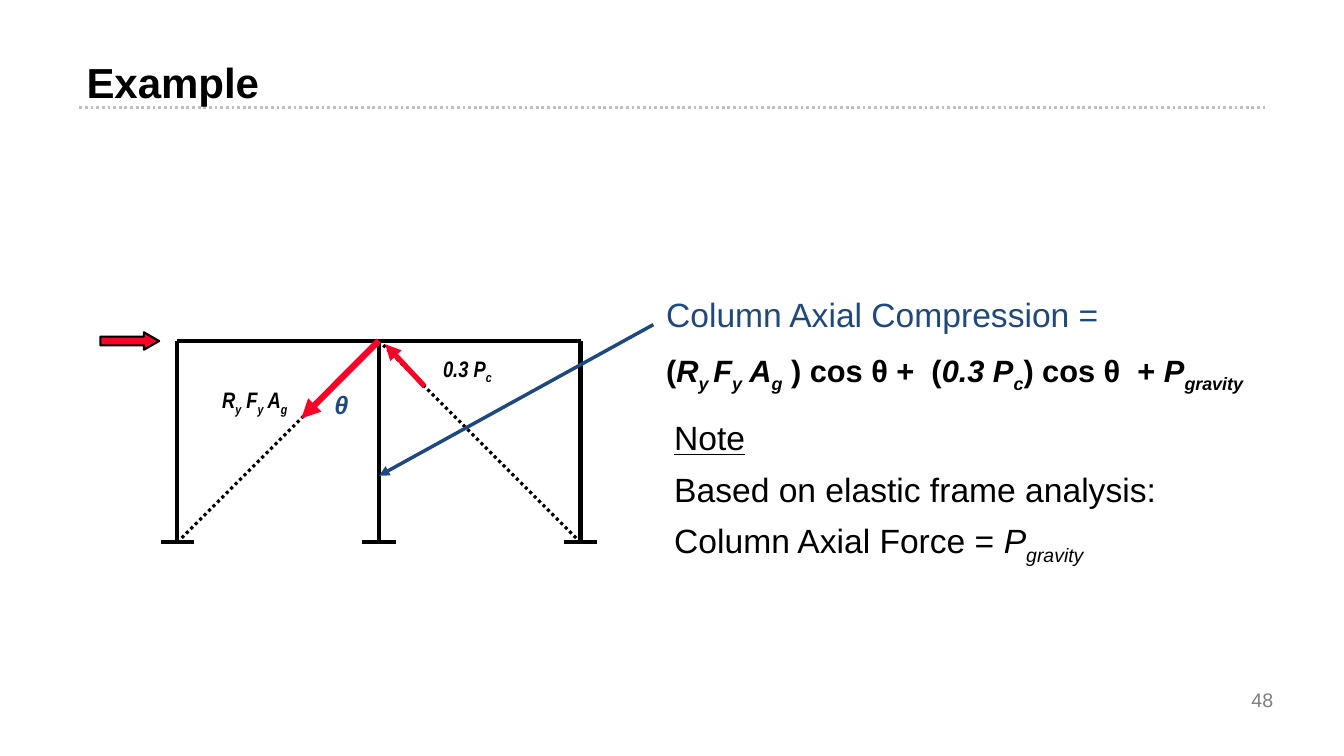
from dataclasses import dataclass

from lxml.etree import SubElement
from pptx import Presentation
from pptx.dml.color import RGBColor
from pptx.enum.dml import MSO_LINE
from pptx.enum.shapes import MSO_CONNECTOR, MSO_SHAPE
from pptx.enum.text import MSO_ANCHOR, PP_ALIGN
from pptx.oxml.ns import qn
from pptx.util import Pt


@dataclass(frozen=True)
class Theme:
    black: RGBColor = RGBColor(0x00, 0x00, 0x00)
    red: RGBColor = RGBColor(0xFC, 0x01, 0x28)
    blue: RGBColor = RGBColor(0x1F, 0x49, 0x7D)
    rule: RGBColor = RGBColor(0xBF, 0xBF, 0xBF)
    muted: RGBColor = RGBColor(0x7F, 0x7F, 0x7F)
    font: str = "Arial"
    label_font: str = "Arial Narrow"
    title_size: int = 30
    body_size: int = 24
    formula_size: int = 22
    theta_size: int = 18
    label_size: int = 16
    number_size: int = 14


THEME = Theme()

# Run styles: "i" italic, "s" subscript
BRACE_TENSION = [("R", "i"), ("y", "is"), (" F", "i"), ("y", "is"), (" A", "i"), ("g", "is")]
BRACE_COMPRESSION = [("0.3 P", "i"), ("c", "is")]
COLUMN_FORMULA = [
    ("(", ""), ("R", "i"), ("y ", "is"), ("F", "i"), ("y", "is"), (" A", "i"), ("g", "is"),
    (" ) cos θ +  (", ""), *BRACE_COMPRESSION, (") cos θ  + ", ""), ("P", "i"), ("gravity", "is"),
]
NOTE_LINES = [
    [("Note", "")],
    [("Based on elastic frame analysis:", "")],
    [("Column Axial Force = ", ""), ("P", "i"), ("gravity", "is")],
]


def add_line(slide, start, end, color, width, dash=None, arrow=False):
    line = slide.shapes.add_connector(MSO_CONNECTOR.STRAIGHT, *map(Pt, (*start, *end)))
    line.line.color.rgb = color
    line.line.width = Pt(width)
    if dash:
        line.line.dash_style = dash
    properties = line._element.spPr
    if arrow:
        SubElement(properties.find(qn("a:ln")), qn("a:tailEnd"), type="triangle")
    SubElement(properties, qn("a:effectLst"))


def add_text(slide, box, lines, size, color, font=THEME.font, bold=False,
             align=PP_ALIGN.LEFT, anchor=MSO_ANCHOR.TOP, gap=0):
    frame = slide.shapes.add_textbox(*map(Pt, box)).text_frame
    frame.word_wrap = True
    frame.vertical_anchor = anchor
    for index, runs in enumerate(lines):
        paragraph = frame.paragraphs[0] if index == 0 else frame.add_paragraph()
        paragraph.alignment = align
        if index:
            paragraph.space_before = Pt(gap)
        paragraph.font.name = font
        paragraph.font.size = Pt(size)
        paragraph.font.bold = bold
        paragraph.font.color.rgb = color
        for text, style in runs:
            run = paragraph.add_run()
            run.text = text
            if "i" in style:
                run.font.italic = True
            if "s" in style:
                run.font._element.set("baseline", "-25000")
    return frame


def add_header(slide, left, top, width, height):
    add_line(slide, (left + 2, top + 43), (left + 849, top + 43),
             THEME.rule, 2, MSO_LINE.ROUND_DOT)
    add_text(slide, (left, top, width, height), [[("Example", "")]],
             THEME.title_size, THEME.black, bold=True, anchor=MSO_ANCHOR.MIDDLE)


def add_page_number(slide, left, top, width, height):
    add_text(slide, (left, top, width, height), [[("48", "")]], THEME.number_size,
             THEME.muted, align=PP_ALIGN.RIGHT, anchor=MSO_ANCHOR.MIDDLE)


def add_braced_frame(slide, left, top, width, height):
    bay = width / 2
    base = top + height
    columns = [left + bay * index for index in range(3)]
    joint = columns[1]

    # Lateral load
    load = slide.shapes.add_shape(MSO_SHAPE.RIGHT_ARROW, Pt(left - 55), Pt(top - 6), Pt(42), Pt(12.4))
    load.adjustments[0] = 0.5
    load.adjustments[1] = 0.875
    load.shadow.inherit = False
    load.fill.solid()
    load.fill.fore_color.rgb = THEME.red
    load.line.color.rgb = THEME.black
    load.line.width = Pt(1.5)

    # Columns with their base plates, then the beams
    for x in columns:
        add_line(slide, (x, base), (x, top), THEME.black, 3)
        add_line(slide, (x - 12, base), (x + 12, base), THEME.black, 3)
    for x in columns[:2]:
        add_line(slide, (x, top), (x + bay, top), THEME.black, 3)

    # Braces and their forces at the middle joint
    for foot in (columns[0], columns[2]):
        add_line(slide, (foot, base), (joint, top), THEME.black, 2.25, MSO_LINE.ROUND_DOT)
    add_line(slide, (joint, top), (joint - 55.4, top + 55.4), THEME.red, 4.5, arrow=True)
    add_line(slide, (joint + 32.5, top + 32.5), (joint + 4.5, top + 2.5), THEME.red, 3.75, arrow=True)

    # Force and angle labels
    for label, dx, dy in ((BRACE_TENSION, -121.7, 28.8), (BRACE_COMPRESSION, 30.2, 6.5)):
        add_text(slide, (joint + dx, top + dy, 66, 27), [label], THEME.label_size,
                 THEME.black, THEME.label_font, bold=True, align=PP_ALIGN.CENTER)
    add_text(slide, (joint - 59.8, top + 31, 66, 29), [[("θ", "i")]], THEME.theta_size,
             THEME.blue, bold=True, align=PP_ALIGN.CENTER)

    # Pointer from the column force to the middle column
    add_line(slide, (joint + 196, top - 11.5), (joint, top + 96.5), THEME.blue, 2.5, arrow=True)


def add_column_force(slide, left, top, width, height):
    add_text(slide, (left, top, width, 37), [[("Column Axial Compression =", "")]],
             THEME.body_size, THEME.blue)
    add_text(slide, (left, top + height - 34, width, 34), [COLUMN_FORMULA],
             THEME.formula_size, THEME.black, bold=True)


def add_note(slide, left, top, width, height):
    note = add_text(slide, (left, top, width, height), NOTE_LINES,
                    THEME.body_size, THEME.black, gap=8)
    note.paragraphs[0].font.underline = True


def main():
    presentation = Presentation()
    presentation.slide_width = Pt(960)
    presentation.slide_height = Pt(540)
    slide = presentation.slides.add_slide(presentation.slide_layouts[6])
    add_header(slide, 54.7, 34, 862, 49)
    add_page_number(slide, 692.6, 485.3, 224, 28.8)
    add_braced_frame(slide, 126.7, 243.4, 288, 144)
    add_note(slide, 474.5, 294.5, 370, 111)
    add_column_force(slide, 468.7, 206.6, 455, 75)
    presentation.save("out.pptx")


if __name__ == "__main__":
    main()
